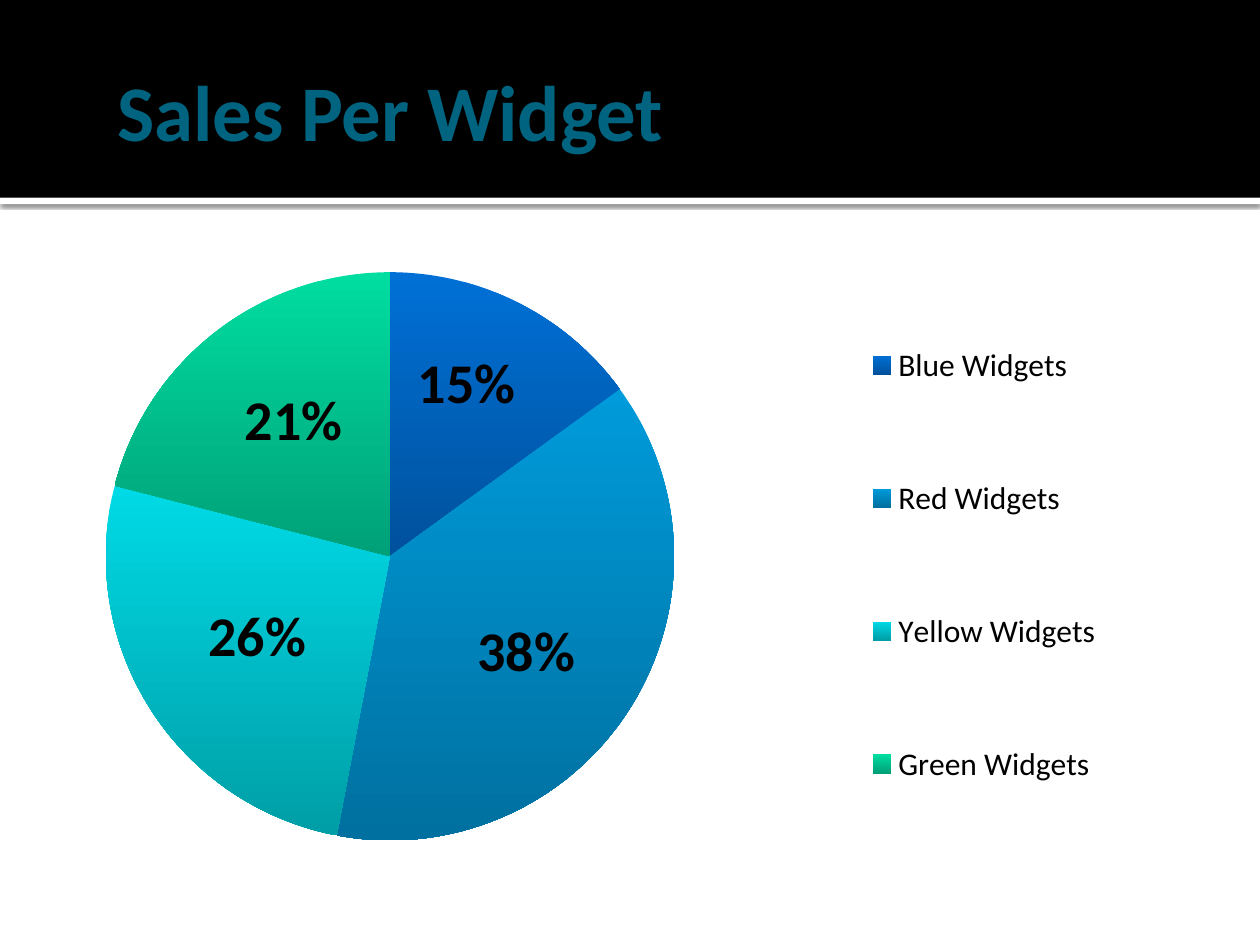
from lxml import etree
from pptx import Presentation
from pptx.chart.data import CategoryChartData
from pptx.dml.color import RGBColor
from pptx.enum.chart import XL_CHART_TYPE, XL_LABEL_POSITION, XL_LEGEND_POSITION
from pptx.enum.shapes import MSO_SHAPE
from pptx.enum.text import MSO_ANCHOR, PP_ALIGN
from pptx.oxml import parse_xml
from pptx.oxml.ns import nsdecls, qn
from pptx.util import Inches, Pt

PIE = XL_CHART_TYPE.PIE
LABEL_CENTER = XL_LABEL_POSITION.CENTER
LEGEND_RIGHT = XL_LEGEND_POSITION.RIGHT
RECTANGLE = MSO_SHAPE.RECTANGLE
MIDDLE = MSO_ANCHOR.MIDDLE
LEFT = PP_ALIGN.LEFT

FONT = "Calibri"
TITLE = "Sales Per Widget"
# widget, percent, gradient top and bottom, label shift as a share of the chart
WIDGETS = [
    ("Blue Widgets", 15, "0070D6", "00519C", (0.01, -0.06)),
    ("Red Widgets", 38, "009BDA", "0070A0", (0.013, 0.027)),
    ("Yellow Widgets", 26, "00DAE6", "009EA6", (-0.01, 0.007)),
    ("Green Widgets", 21, "00DDA0", "00A078", (-0.007, -0.03)),
]
PLOT_AREA = (0.084, 0.098, 0.451, 0.762)
LEGEND_AREA = (0.656, 0.07, 0.25, 0.84)
HEADER_HEIGHT = 1.57


def color(hex_code):
    return RGBColor.from_string(hex_code)


def set_font(font, size, hex_code, bold=False):
    font.name, font.size, font.bold = FONT, Pt(size), bold
    font.color.rgb = color(hex_code)


def add_band(slide, top, height, hex_code):
    band = slide.shapes.add_shape(RECTANGLE, 0, Inches(top), Inches(10), Inches(height))
    band.shadow.inherit = False
    band.fill.solid()
    band.fill.fore_color.rgb = color(hex_code)
    band.line.fill.background()
    return band


def add_drop_shadow(shape):
    effects = shape._element.spPr.find(qn("a:effectLst"))
    effects.append(parse_xml(
        f'<a:outerShdw {nsdecls("a")} blurRad="{Pt(2.5)}" dist="{Pt(0.8)}" dir="5400000"'
        ' rotWithShape="0"><a:srgbClr val="000000"><a:alpha val="60000"/></a:srgbClr>'
        '</a:outerShdw>'))


def manual_layout(**settings):
    layout = parse_xml(f'<c:layout {nsdecls("c")}><c:manualLayout/></c:layout>')
    for tag, value in settings.items():
        etree.SubElement(layout[0], qn(f"c:{tag}")).set("val", str(value))
    return layout


def area_layout(area, **target):
    x, y, w, h = area
    return manual_layout(**target, xMode="edge", yMode="edge", x=x, y=y, w=w, h=h)


def add_header(slide):
    add_drop_shadow(add_band(slide, HEADER_HEIGHT, 0.05, "FFFFFF"))
    add_band(slide, 0, HEADER_HEIGHT, "000000")
    title = slide.shapes.title
    slide.shapes._spTree.append(title._element)  # in front of the bands
    title.left, title.top = Inches(0.83), Inches(0.25)
    title.width, title.height = Inches(8.5), Inches(1.25)
    frame = title.text_frame
    frame.vertical_anchor = MIDDLE
    frame.margin_left = Inches(0.1)
    frame.margin_top = frame.margin_right = frame.margin_bottom = Inches(0.05)
    paragraph = frame.paragraphs[0]
    paragraph.alignment = LEFT
    run = paragraph.add_run()
    run.text = TITLE
    set_font(run.font, 45, "00637F", bold=True)


def format_slice(point, top_color, bottom_color, shift):
    fill = point.format.fill
    fill.gradient()
    fill.gradient_angle = 270
    for stop, hex_code in zip(fill.gradient_stops, (top_color, bottom_color)):
        stop.color.rgb = color(hex_code)
    point.format.line.fill.background()

    label = point.data_label
    set_font(label.font, 32, "000000", bold=True)
    label.position = LABEL_CENTER
    element = label._dLbl
    element.find(qn("c:showVal")).set("val", "0")
    element.find(qn("c:showPercent")).set("val", "1")
    element.find(qn("c:idx")).addnext(manual_layout(x=shift[0], y=shift[1]))


def add_sales_chart(slide):
    data = CategoryChartData()
    data.categories = [widget[0] for widget in WIDGETS]
    data.add_series("Series 1", [widget[1] for widget in WIDGETS])
    chart = slide.shapes.add_chart(
        PIE, 0, Inches(1.58), Inches(10), Inches(5.92), data).chart
    chart.has_title = False
    set_font(chart.font, 18, "000000")

    chart.has_legend = True
    legend = chart.legend
    legend.position = LEGEND_RIGHT
    legend.include_in_layout = False
    legend._element.find(qn("c:legendPos")).addnext(area_layout(LEGEND_AREA))

    plot = chart.plots[0]
    plot.vary_by_categories = True
    series = plot.series[0]
    labels = series.data_labels
    labels.show_percentage, labels.show_value = True, False
    labels.number_format, labels.number_format_is_linked = "0%", False
    set_font(labels.font, 32, "000000", bold=True)
    for index, (_, _, top_color, bottom_color, shift) in enumerate(WIDGETS):
        format_slice(series.points[index], top_color, bottom_color, shift)

    plot_area = plot._element.getparent()
    for layout in plot_area.findall(qn("c:layout")):
        plot_area.remove(layout)
    plot_area.insert(0, area_layout(PLOT_AREA, layoutTarget="inner"))


def main():
    deck = Presentation()
    deck.slide_width, deck.slide_height = Inches(10), Inches(7.5)
    slide = deck.slides.add_slide(deck.slide_layouts[5])
    add_header(slide)
    add_sales_chart(slide)
    deck.save("out.pptx")


if __name__ == "__main__":
    main()
